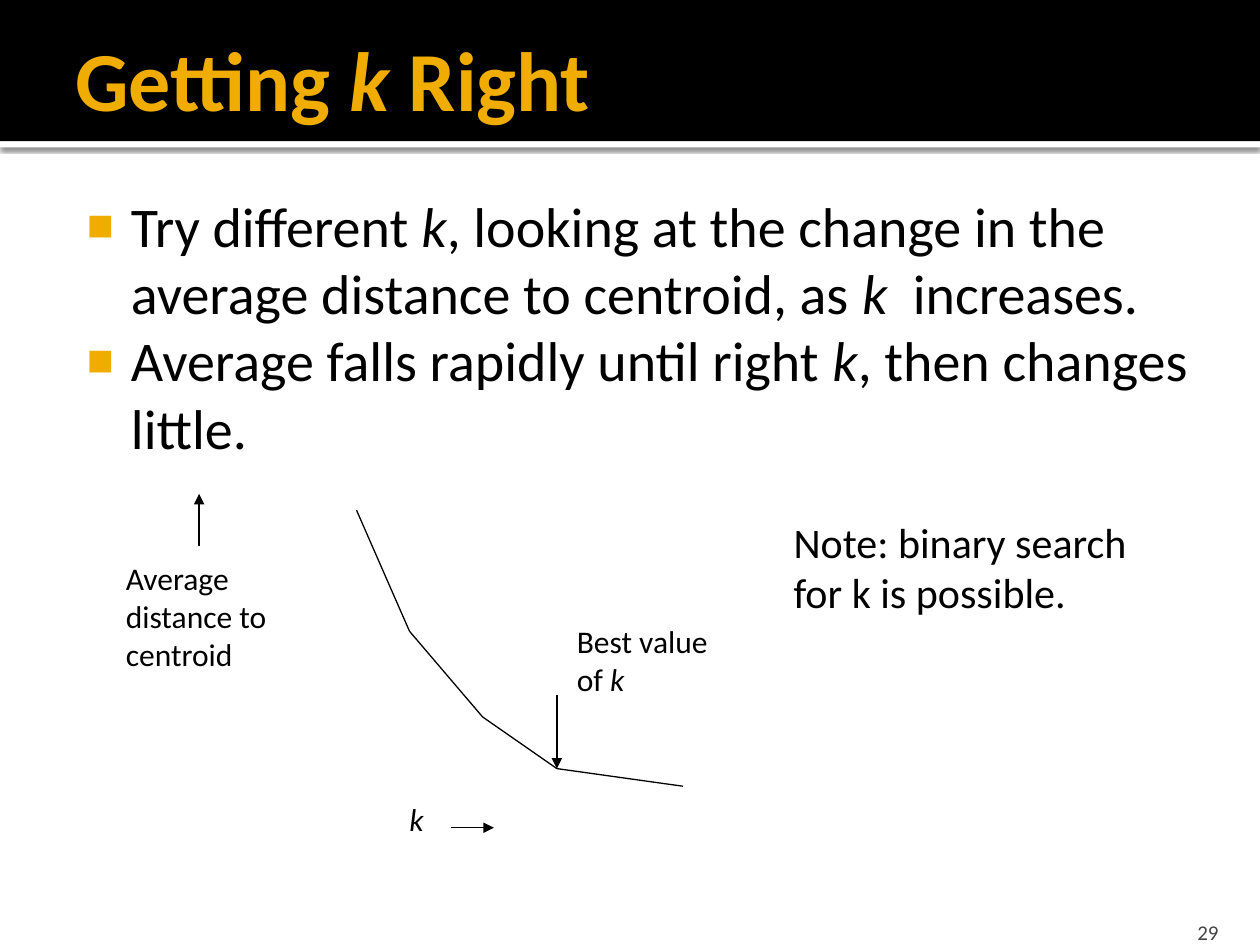
import pptx
import pptx.util
import pptx.dml.color
import pptx.enum.shapes
import pptx.enum.text
import pptx.oxml
import pptx.oxml.ns
import lxml.etree

PX = 9144
INK = {"gold": "F0AD00", "black": "000000", "white": "FFFFFF", "gray": "454545"}
FONT = "Calibri"
ALIGN = pptx.enum.text.PP_ALIGN
ANCHOR = pptx.enum.text.MSO_ANCHOR


def emu(*nums):
    return [pptx.util.Emu(n * PX) for n in nums]


def rgb(name):
    return pptx.dml.color.RGBColor.from_string(INK[name])


def node(root, tag, **attrs):
    return lxml.etree.SubElement(root, pptx.oxml.ns.qn(tag), attrs)


def write(slide, box, lines, size, ink="black", bold=False, inset=(10, 5, 10, 5),
          anchor=ANCHOR.TOP, align=ALIGN.LEFT):
    frame = slide.shapes.add_textbox(*emu(*box)).text_frame
    frame.word_wrap = True
    frame.vertical_anchor = anchor
    (frame.margin_left, frame.margin_top,
     frame.margin_right, frame.margin_bottom) = emu(*inset)
    frame.text = "\n".join(lines)
    for para, line in zip(frame.paragraphs, lines):
        para.alignment = align
        parts = line.split("*")
        para.text = parts[0]
        for part in parts[1:]:
            para.add_run().text = part
        offset = len(parts) - len(para.runs)
        for place, run in enumerate(para.runs, offset):
            run.font.name = FONT
            run.font.size = pptx.util.Pt(size)
            run.font.bold = bold
            run.font.italic = place % 2 == 1
            run.font.color.rgb = rgb(ink)
    return frame


def draw(slide, left, top, start, end, arrow=False):
    ends = emu(left + start[0], top + start[1], left + end[0], top + end[1])
    line = slide.shapes.add_connector(pptx.enum.shapes.MSO_CONNECTOR.STRAIGHT, *ends)
    line.line.color.rgb = rgb("black")
    line.line.width = pptx.util.Pt(0.75)
    if arrow:
        node(line.line._get_or_add_ln(), "a:tailEnd", type="triangle")
    node(line._element.spPr, "a:effectLst")


def bar(slide, box, ink):
    shape = slide.shapes.add_shape(pptx.enum.shapes.MSO_SHAPE.RECTANGLE, *emu(*box))
    shape.shadow.inherit = False
    shape.fill.solid()
    shape.fill.fore_color.rgb = rgb(ink)
    shape.line.fill.background()
    return shape


def header(slide, left, top, width):
    strip = bar(slide, (left, top + 112, width, 5), "white")
    effects = strip._element.spPr.find(pptx.oxml.ns.qn("a:effectLst"))
    shade = node(effects, "a:outerShdw", blurRad="31750", dist="10160",
                 dir="5400000", algn="tl", rotWithShape="0")
    tint = node(shade, "a:srgbClr", val=INK["black"])
    node(tint, "a:alpha", val="60000")
    bar(slide, (left, top, width, 112), "black")
    write(slide, (left + 50, top + 8, width - 50, 108), ["Getting *k *Right"], 48,
          "gold", True, (10, 5, 5, 5), ANCHOR.MIDDLE)


def body(slide, left, top, width, height):
    lines = [
        "Try different *k*, looking at the change in the average distance "
        "to centroid, as *k*  increases.",
        "Average falls rapidly until right *k*, then changes little.",
    ]
    frame = write(slide, (left, top, width, height), lines, 32, inset=(6, 10, 10, 5))
    for para in frame.paragraphs:
        props = para._p.get_or_add_pPr()
        props.set("marL", str(48 * PX))
        props.set("indent", str(-35 * PX))
        node(node(props, "a:buClr"), "a:srgbClr", val=INK["gold"])
        node(props, "a:buSzPct", val="80000")
        node(props, "a:buFont", typeface="Arial")
        node(props, "a:buChar", char="■")


def graph(slide, left, top):
    curve = [(193, 13), (235, 109), (293, 177), (352, 218), (452, 232)]
    for start, end in zip(curve, curve[1:]):
        draw(slide, left, top, start, end)
    for start, end in [((68, 41), (68, 0)), ((268, 265), (302, 265)),
                       ((352, 160), curve[3])]:
        draw(slide, left, top, start, end, True)
    for x, y, width, height, lines in [
        (225, 238, 37, 40, ["*k"]),
        (0, 47, 181, 100, ["Average", "distance to", "centroid"]),
        (358, 97, 172, 70, ["Best value", "of *k"]),
    ]:
        write(slide, (left + x, top + y, width, height), lines, 18)


def note(slide, left, top):
    write(slide, (left, top, 291, 91), ["Note: binary search", "for k is possible."], 24)


def footer(slide, left, top):
    write(slide, (left, top, 80, 30), ["29"], 12, "gray", inset=(10, 5, 10, 0),
          anchor=ANCHOR.BOTTOM, align=ALIGN.RIGHT)


def main():
    deck = pptx.Presentation()
    deck.slide_width, deck.slide_height = emu(1000, 750)
    slide = deck.slides.add_slide(deck.slide_layouts[6])
    header(slide, 0, 0, 1000)
    footer(slide, 897, 720)
    body(slide, 50, 142, 933, 575)
    graph(slide, 90, 392)
    note(slide, 620, 405)
    deck.save("out.pptx")


if __name__ == "__main__":
    main()
